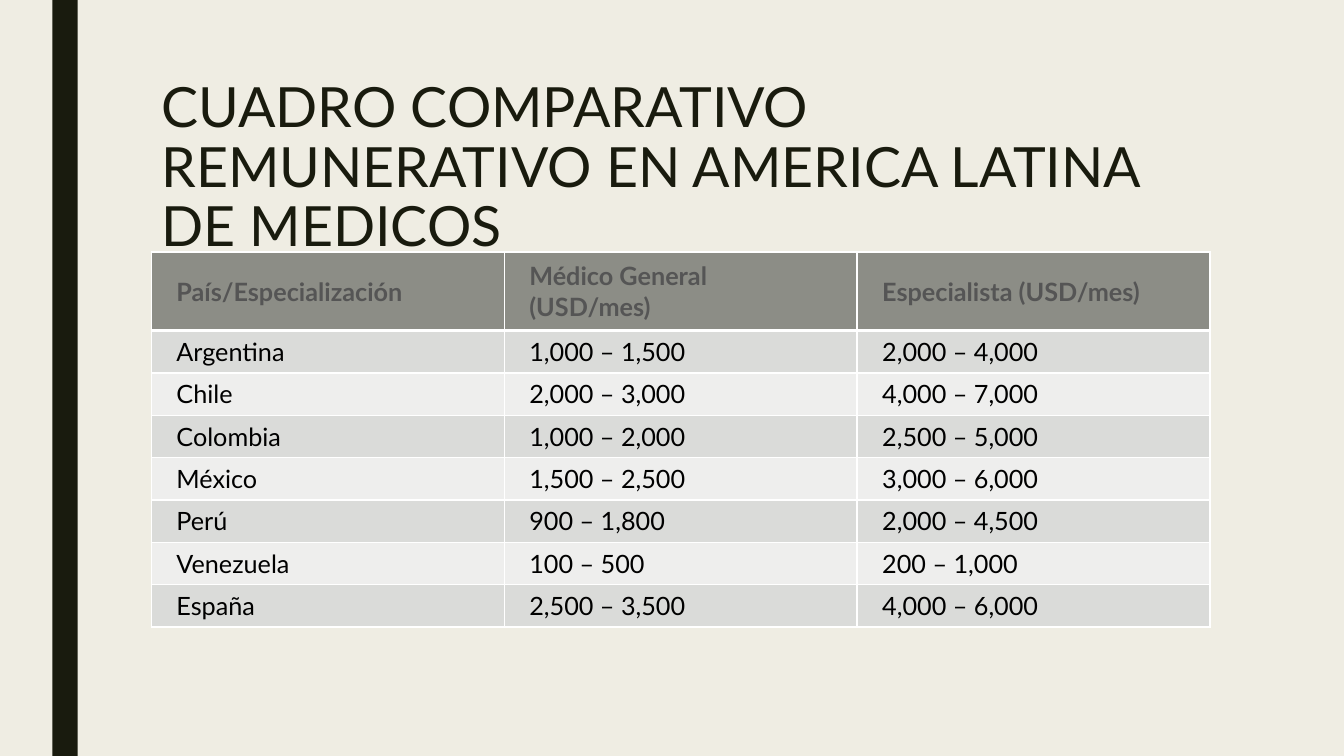
import pptx
import pptx.util
import pptx.dml.color
import pptx.enum.shapes
import pptx.enum.text
import lxml.etree
import pptx.oxml.ns

Inches = pptx.util.Inches
Pt = pptx.util.Pt
RGBColor = pptx.dml.color.RGBColor

CREAM = RGBColor(0xEF, 0xED, 0xE3)
DARK = RGBColor(0x19, 0x1B, 0x0E)
HEADER_FILL = RGBColor(0x8C, 0x8D, 0x86)
HEADER_TEXT = RGBColor(0x55, 0x55, 0x55)
BAND_FILLS = [RGBColor(0xDA, 0xDB, 0xD9), RGBColor(0xEE, 0xEE, 0xED)]
WHITE = RGBColor(0xFF, 0xFF, 0xFF)
BLACK = RGBColor(0, 0, 0)
FONT = "Lato"

SALARIES = [
    ("País/Especialización", "Médico General (USD/mes)", "Especialista (USD/mes)"),
    ("Argentina", "1,000 – 1,500", "2,000 – 4,000"),
    ("Chile", "2,000 – 3,000", "4,000 – 7,000"),
    ("Colombia", "1,000 – 2,000", "2,500 – 5,000"),
    ("México", "1,500 – 2,500", "3,000 – 6,000"),
    ("Perú", "900 – 1,800", "2,000 – 4,500"),
    ("Venezuela", "100 – 500", "200 – 1,000"),
    ("España", "2,500 – 3,500", "4,000 – 6,000"),
]


def add_run(paragraph, text, size, color, bold=False):
    run = paragraph.add_run()
    run.text = text
    run.font.name = FONT
    run.font.size = Pt(size)
    run.font.bold = bold
    run.font.color.rgb = color


def set_border(cell, position, side, color, width):
    line = lxml.etree.Element(pptx.oxml.ns.qn(f"a:ln{side}"), w=str(Pt(width)))
    fill = lxml.etree.SubElement(line, pptx.oxml.ns.qn("a:solidFill"))
    lxml.etree.SubElement(fill, pptx.oxml.ns.qn("a:srgbClr"), val=str(color))
    cell._tc.get_or_add_tcPr().insert(position, line)


deck = pptx.Presentation()
deck.slide_width = Inches(13.33)
deck.slide_height = Inches(7.5)
slide = deck.slides.add_slide(deck.slide_layouts[5])
slide.background.fill.solid()
slide.background.fill.fore_color.rgb = CREAM

# Side bar
side_bar = slide.shapes.add_shape(
    pptx.enum.shapes.MSO_SHAPE.RECTANGLE, Inches(0.52), 0, Inches(0.25), Inches(7.5))
side_bar.shadow.inherit = False
side_bar.fill.solid()
side_bar.fill.fore_color.rgb = DARK
side_bar.line.fill.background()

# Title
title = slide.shapes.title
title.left, title.top = Inches(1.5), Inches(0.75)
title.width, title.height = Inches(10.5), Inches(1.06)
title.text_frame.word_wrap = True
title.text_frame.auto_size = pptx.enum.text.MSO_AUTO_SIZE.NONE
title.text_frame.vertical_anchor = pptx.enum.text.MSO_ANCHOR.TOP
heading = title.text_frame.paragraphs[0]
heading.alignment = pptx.enum.text.PP_ALIGN.LEFT
heading.line_spacing = 0.89
add_run(heading, "CUADRO COMPARATIVO REMUNERATIVO EN AMERICA LATINA DE MEDICOS", 39.6, DARK)

# Salary table
salary_table = slide.shapes.add_table(
    len(SALARIES), 3, Inches(1.5), Inches(2.5), Inches(10.5), Inches(3.46)).table
for column in salary_table.columns:
    column.width = Inches(3.5)

for row_index, values in enumerate(SALARIES):
    is_header = row_index == 0
    salary_table.rows[row_index].height = Inches(0.41)
    for column_index, value in enumerate(values):
        cell = salary_table.cell(row_index, column_index)
        cell.vertical_anchor = pptx.enum.text.MSO_ANCHOR.MIDDLE
        cell.margin_left = cell.margin_right = Inches(0.25)
        cell.margin_top = cell.margin_bottom = Inches(0.09 if is_header else 0.06)
        cell.fill.solid()
        cell.fill.fore_color.rgb = HEADER_FILL if is_header else BAND_FILLS[(row_index - 1) % 2]
        add_run(cell.text_frame.paragraphs[0], value, 18,
                HEADER_TEXT if is_header else BLACK, is_header)
        # The rule under the header is thicker than the other borders
        for position, side in enumerate("LRTB"):
            under_header = (row_index, side) in [(0, "B"), (1, "T")]
            set_border(cell, position, side, WHITE, 3 if under_header else 1)

deck.save("out.pptx")
